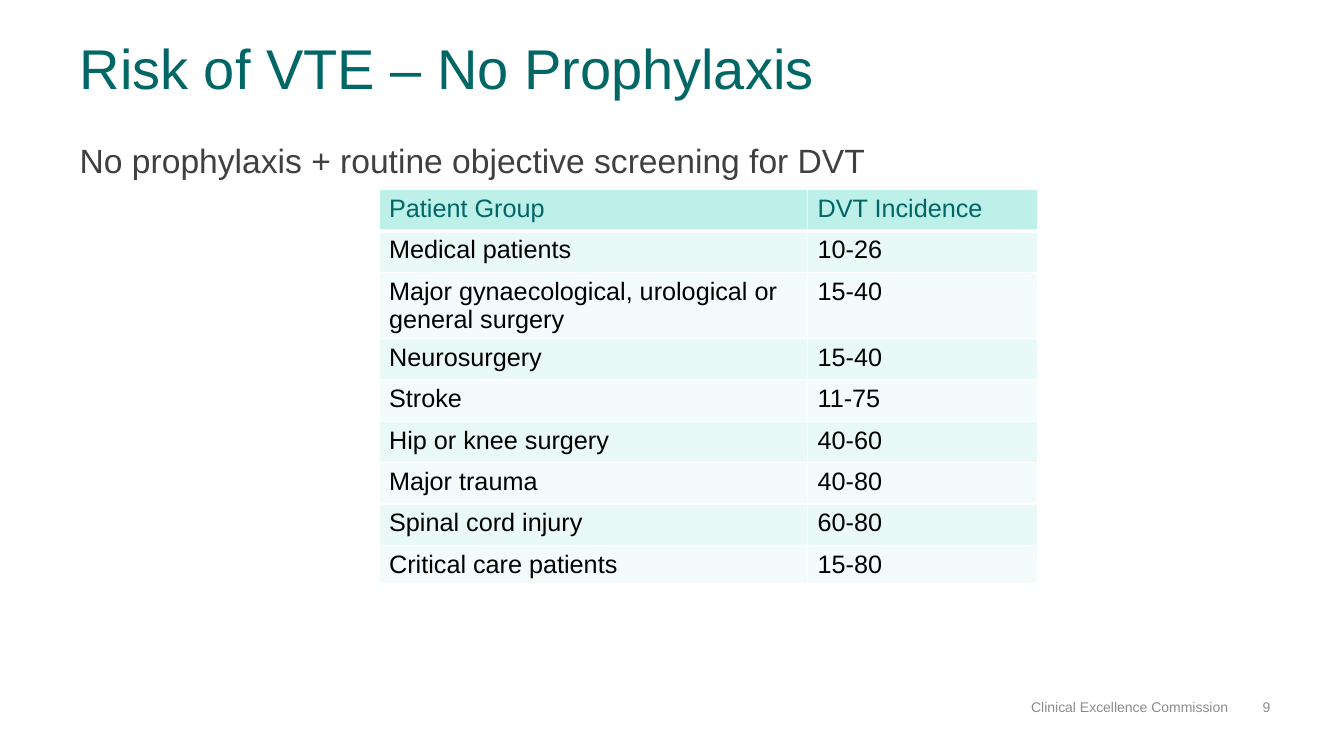
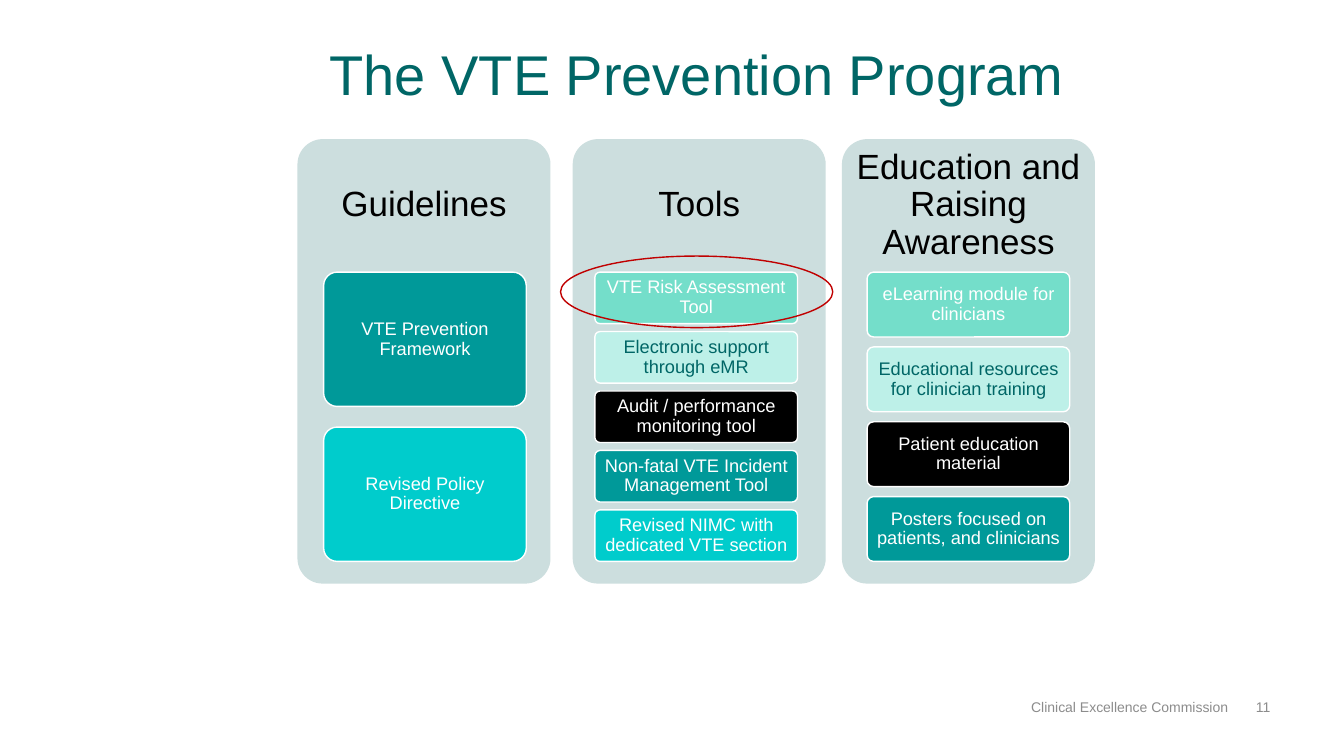
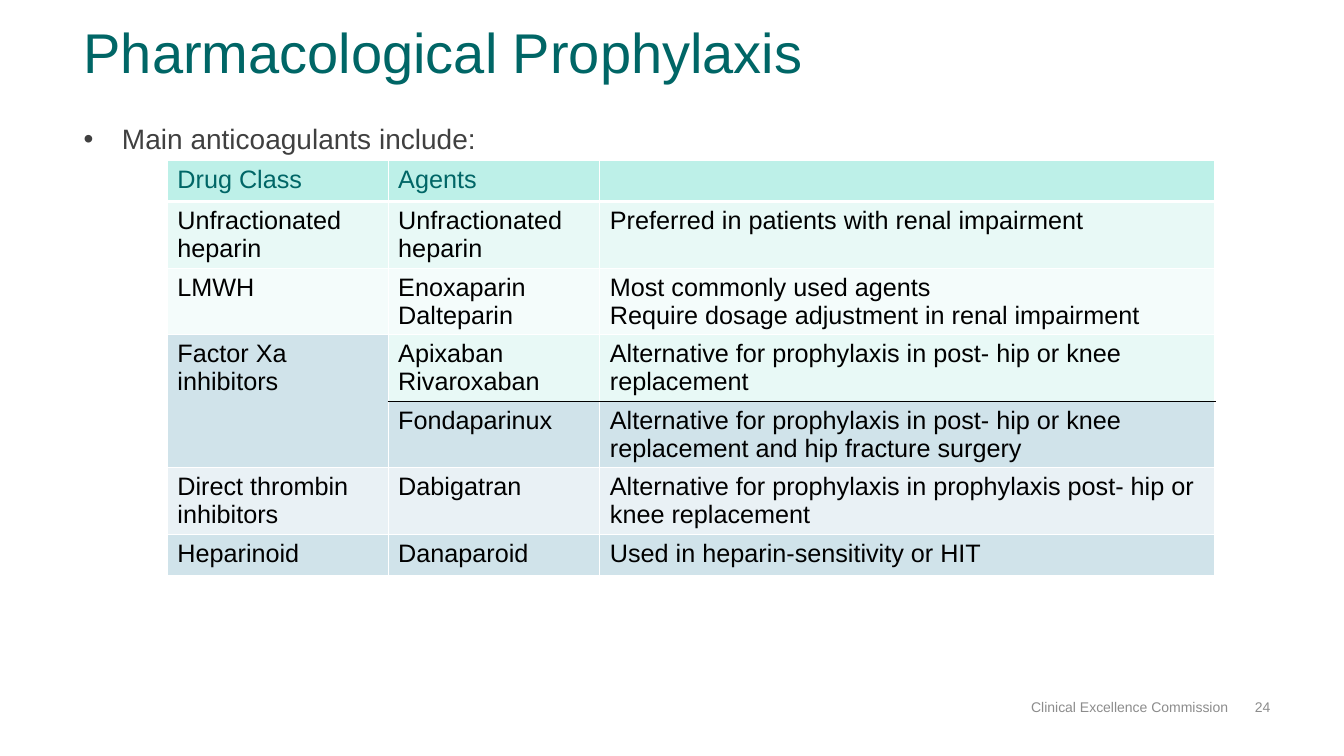
from dataclasses import dataclass
from itertools import cycle

from lxml import etree
from pptx import Presentation
from pptx.dml.color import RGBColor
from pptx.enum.shapes import MSO_SHAPE as Shape
from pptx.enum.text import MSO_ANCHOR as Anchor, MSO_AUTO_SIZE as AutoSize, PP_ALIGN as Align
from pptx.oxml.ns import qn
from pptx.util import Inches, Pt


@dataclass(frozen=True)
class Theme:
    font: str = "Arial"
    # Colours
    title: str = "006666"
    body: str = "404040"
    muted: str = "8C8C8C"
    black: str = "000000"
    white: str = "FFFFFF"
    panel: str = "CCDEDE"
    accent: str = "C00000"
    header: str = "BDF0E8"
    band_dark: str = "E8F9F6"
    band_light: str = "F4FCFB"
    blue_dark: str = "D0E3EA"
    blue_light: str = "E9F1F5"
    cards: tuple = ("009999", "00CCCC", "74DECA", "BDF0E8", "000000")
    # Type sizes
    title_size: int = 40
    lead_size: int = 24
    bullet_size: int = 20
    heading_size: int = 25
    card_size: int = 13
    cell_size: int = 18
    footer_size: int = 10


THEME = Theme()
FOOTER = "Clinical Excellence Commission"


def rgb(color):
    return RGBColor.from_string(color)


def write(frame, text, size, color, align=Align.LEFT, anchor=Anchor.TOP,
          spacing=1.0, inset=(0, 0), bullet=None, indent=0.38):
    """Fill a text frame; each line of the text becomes a paragraph."""
    frame.word_wrap = True
    frame.auto_size = AutoSize.NONE
    frame.vertical_anchor = anchor
    frame.margin_left = frame.margin_right = Inches(inset[0])
    frame.margin_top = frame.margin_bottom = Inches(inset[1])
    write_lines(frame, text, size, color, align, spacing, bullet, indent)


def write_lines(frame, text, size, color, align=Align.LEFT, spacing=1.0,
                bullet=None, indent=0.38):
    frame.text = text
    for line in frame.paragraphs:
        if bullet:
            props = line._p.get_or_add_pPr()
            props.set("marL", str(Inches(indent)))
            props.set("indent", str(-Inches(indent)))
            etree.SubElement(props, qn("a:buFont")).set("typeface", THEME.font)
            etree.SubElement(props, qn("a:buChar")).set("char", bullet)
        line.alignment = align
        line.line_spacing = spacing
        line.font.name = THEME.font
        line.font.size = Pt(size)
        line.font.bold = False
        line.font.color.rgb = rgb(color)


def add_text(slide, box, text, size, color, **style):
    label = slide.shapes.add_textbox(*map(Inches, box))
    write(label.text_frame, text, size, color, **style)


def add_block(slide, kind, box, fill=None, line=None):
    block = slide.shapes.add_shape(kind, *map(Inches, box))
    block.shadow.inherit = False
    if kind == Shape.ROUNDED_RECTANGLE:
        block.adjustments[0] = 0.1
    if fill:
        block.fill.solid()
        block.fill.fore_color.rgb = rgb(fill)
    else:
        block.fill.background()
    if line:
        block.line.color.rgb = rgb(line)
        block.line.width = Pt(1)
    else:
        block.line.fill.background()
    return block


def add_slide(deck, title, number, box, align=Align.LEFT):
    """Title-only slide with the shared title style and footer."""
    slide = deck.slides.add_slide(deck.slide_layouts[5])
    heading = slide.shapes.title
    heading.left, heading.top, heading.width, heading.height = map(Inches, box)
    write(heading.text_frame, title, THEME.title_size, THEME.title,
          align=align, spacing=0.9)
    for text, left, width in ((FOOTER, 7.68, 4.5), (number, 12.18, 0.42)):
        add_text(slide, (left, 6.7, width, 0.4), text, THEME.footer_size,
                 THEME.muted, align=Align.RIGHT, anchor=Anchor.BOTTOM)
    return slide


def set_borders(cell, top=THEME.white, bottom=THEME.white, bottom_width=1):
    edges = (("a:lnL", THEME.white, 1), ("a:lnR", THEME.white, 1),
             ("a:lnT", top, 1), ("a:lnB", bottom, bottom_width))
    props = cell._tc.get_or_add_tcPr()
    for position, (tag, color, width) in enumerate(edges):
        edge = etree.Element(qn(tag), w=str(Pt(width)))
        fill = etree.SubElement(edge, qn("a:solidFill"))
        etree.SubElement(fill, qn("a:srgbClr")).set("val", color)
        props.insert(position, edge)


def add_grid(slide, left, top, widths, heights, rows, fill_for, rule_below=None):
    """Table with a header row; rule_below is the row with a dark rule under it."""
    grid = slide.shapes.add_table(len(rows), len(widths), *map(
        Inches, (left, top, sum(widths), sum(heights)))).table
    grid.first_row = grid.horz_banding = False
    for column, width in zip(grid.columns, widths):
        column.width = Inches(width)
    for r, (row, height) in enumerate(zip(rows, heights)):
        grid.rows[r].height = Inches(height)
        for c, text in enumerate(row):
            cell = grid.cell(r, c)
            cell.fill.solid()
            cell.fill.fore_color.rgb = rgb(fill_for(r, c))
            write_lines(cell.text_frame, text, THEME.cell_size,
                        THEME.black if r else THEME.title)
            ruled = rule_below is not None and c > 0
            set_borders(
                cell,
                top=THEME.black if ruled and r == rule_below + 1 else THEME.white,
                bottom=THEME.black if ruled and r == rule_below else THEME.white,
                bottom_width=1 if r else 3)
    return grid


def band_fill(row, column):
    if row == 0:
        return THEME.header
    return THEME.band_dark if row % 2 else THEME.band_light


def drug_fill(row, column):
    if row == 5:
        return THEME.blue_light
    if row in (4, 6) or (row, column) == (3, 0):
        return THEME.blue_dark
    return band_fill(row, column)


def add_column(slide, box, heading, cards, card_inset, colors):
    """Panel with a heading and cards that share the height below it."""
    left, top, width, height = box
    heading_height, foot, card_width, gap_ratio = 1.32, 0.22, 2.01, 0.154
    add_block(slide, Shape.ROUNDED_RECTANGLE, box, fill=THEME.panel)
    add_text(slide, (left, top, width, heading_height), heading,
             THEME.heading_size, THEME.black, align=Align.CENTER,
             anchor=Anchor.MIDDLE, spacing=0.9, inset=(0.1, 0.1))
    count = len(cards)
    card_height = (height - heading_height - foot) / (count + (count - 1) * gap_ratio)
    for i, text in enumerate(cards):
        color = next(colors)
        card_top = top + heading_height + i * card_height * (1 + gap_ratio)
        card = add_block(slide, Shape.ROUNDED_RECTANGLE,
                         (left + card_inset, card_top, card_width, card_height),
                         fill=color, line=THEME.white)
        write(card.text_frame, text, THEME.card_size,
              THEME.title if color == THEME.header else THEME.white,
              align=Align.CENTER, anchor=Anchor.MIDDLE, spacing=0.9,
              inset=(0.04, 0.03))


def build_risk(deck):
    slide = add_slide(deck, "Risk of VTE – No Prophylaxis", "9",
                      (0.79, 0.41, 11.81, 0.73))
    add_text(slide, (0.79, 1.31, 11.81, 0.5),
             "No prophylaxis + routine objective screening for DVT",
             THEME.lead_size, THEME.body, spacing=1.2)
    rows = [
        ("Patient Group", "DVT Incidence"),
        ("Medical patients", "10-26"),
        ("Major gynaecological, urological or general surgery", "15-40"),
        ("Neurosurgery", "15-40"),
        ("Stroke", "11-75"),
        ("Hip or knee surgery", "40-60"),
        ("Major trauma", "40-80"),
        ("Spinal cord injury", "60-80"),
        ("Critical care patients", "15-80"),
    ]
    heights = [0.41] * 2 + [0.65] + [0.41] * 5 + [0.37]
    add_grid(slide, 3.76, 1.88, (4.25, 2.28), heights, rows, band_fill)


def build_program(deck):
    slide = add_slide(deck, "The VTE Prevention Program", "11",
                      (0.91, 0.47, 12, 0.93), align=Align.CENTER)
    columns = [
        (2.95, 0.26, "Guidelines",
         ["VTE Prevention Framework", "Revised Policy Directive"]),
        (5.68, 0.22, "Tools",
         ["VTE Risk Assessment Tool", "Electronic support through eMR",
          "Audit / performance monitoring tool",
          "Non-fatal VTE Incident Management Tool",
          "Revised NIMC with dedicated VTE section"]),
        (8.35, 0.25, "Education and Raising Awareness",
         ["eLearning module for clinicians",
          "Educational resources for clinician training",
          "Patient education material",
          "Posters focused on patients, and clinicians"]),
    ]
    colors = cycle(THEME.cards)
    for left, card_inset, heading, cards in columns:
        add_column(slide, (left, 1.38, 2.51, 4.41), heading, cards, card_inset, colors)
    # Ring around the risk assessment tool
    add_block(slide, Shape.OVAL, (5.56, 2.54, 2.7, 0.71), line=THEME.accent)


def build_drugs(deck):
    slide = add_slide(deck, "Pharmacological Prophylaxis", "24",
                      (0.83, 0.25, 11.81, 0.73))
    add_text(slide, (0.83, 1.14, 6.12, 0.42), "Main anticoagulants include:",
             THEME.bullet_size, THEME.body, spacing=1.2, bullet="•")
    rows = [
        ("Drug Class", "Agents", ""),
        ("Unfractionated heparin", "Unfractionated heparin",
         "Preferred in patients with renal impairment"),
        ("LMWH", "Enoxaparin\nDalteparin",
         "Most commonly used agents\nRequire dosage adjustment in renal impairment"),
        ("Factor Xa inhibitors", "Apixaban\nRivaroxaban",
         "Alternative for prophylaxis in post- hip or knee replacement"),
        ("", "Fondaparinux",
         "Alternative for prophylaxis in post- hip or knee replacement "
         "and hip fracture surgery"),
        ("Direct thrombin inhibitors", "Dabigatran",
         "Alternative for prophylaxis in prophylaxis post- hip or knee replacement"),
        ("Heparinoid", "Danaparoid", "Used in heparin-sensitivity or HIT"),
    ]
    heights = [0.41] + [0.66] * 5 + [0.41]
    grid = add_grid(slide, 1.66, 1.59, (2.19, 2.1, 6.1), heights, rows,
                    drug_fill, rule_below=3)
    grid.cell(3, 0).merge(grid.cell(4, 0))


def main():
    deck = Presentation()
    deck.slide_width, deck.slide_height = Inches(13.33), Inches(7.5)
    for build in (build_risk, build_program, build_drugs):
        build(deck)
    deck.save("out.pptx")


if __name__ == "__main__":
    main()
